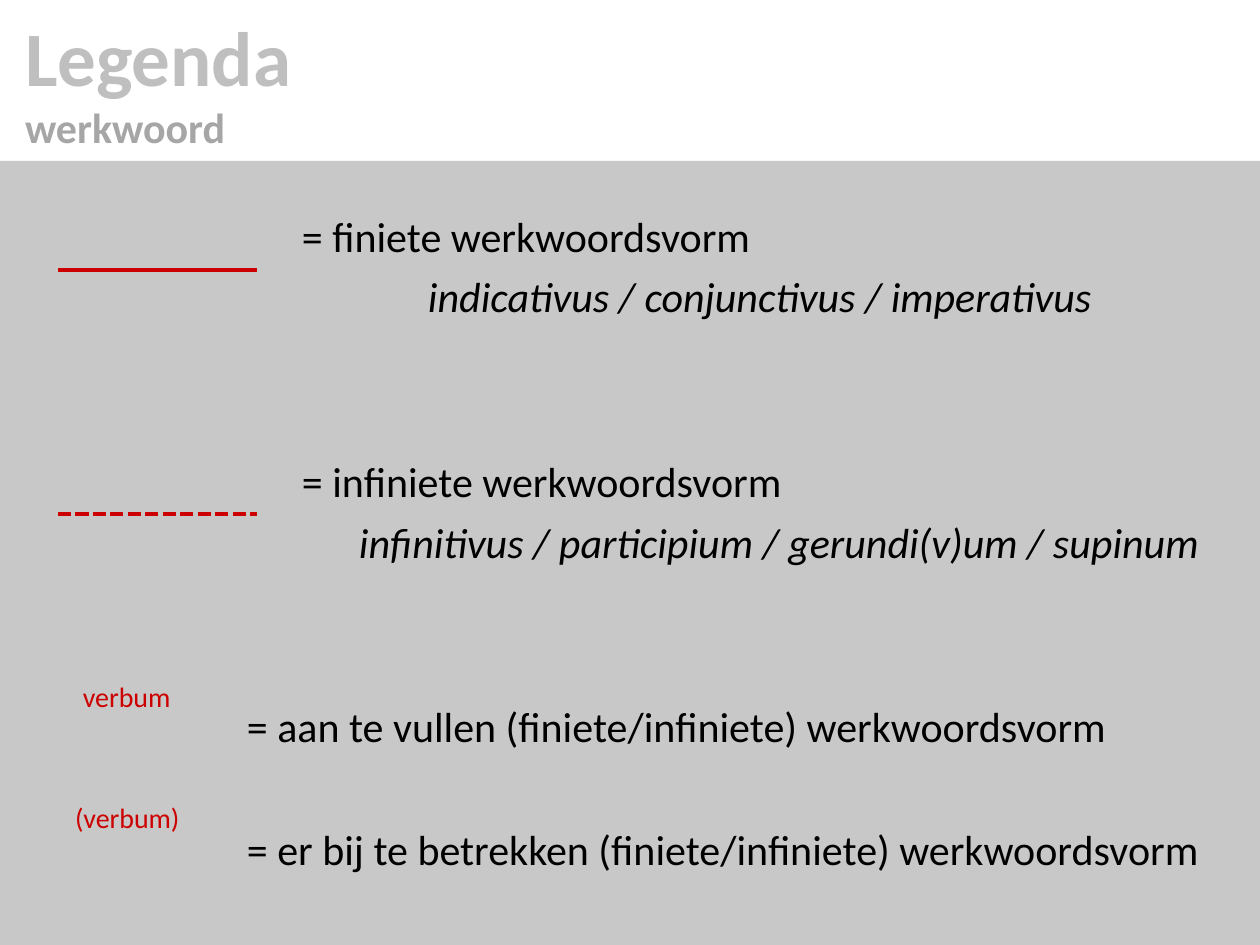
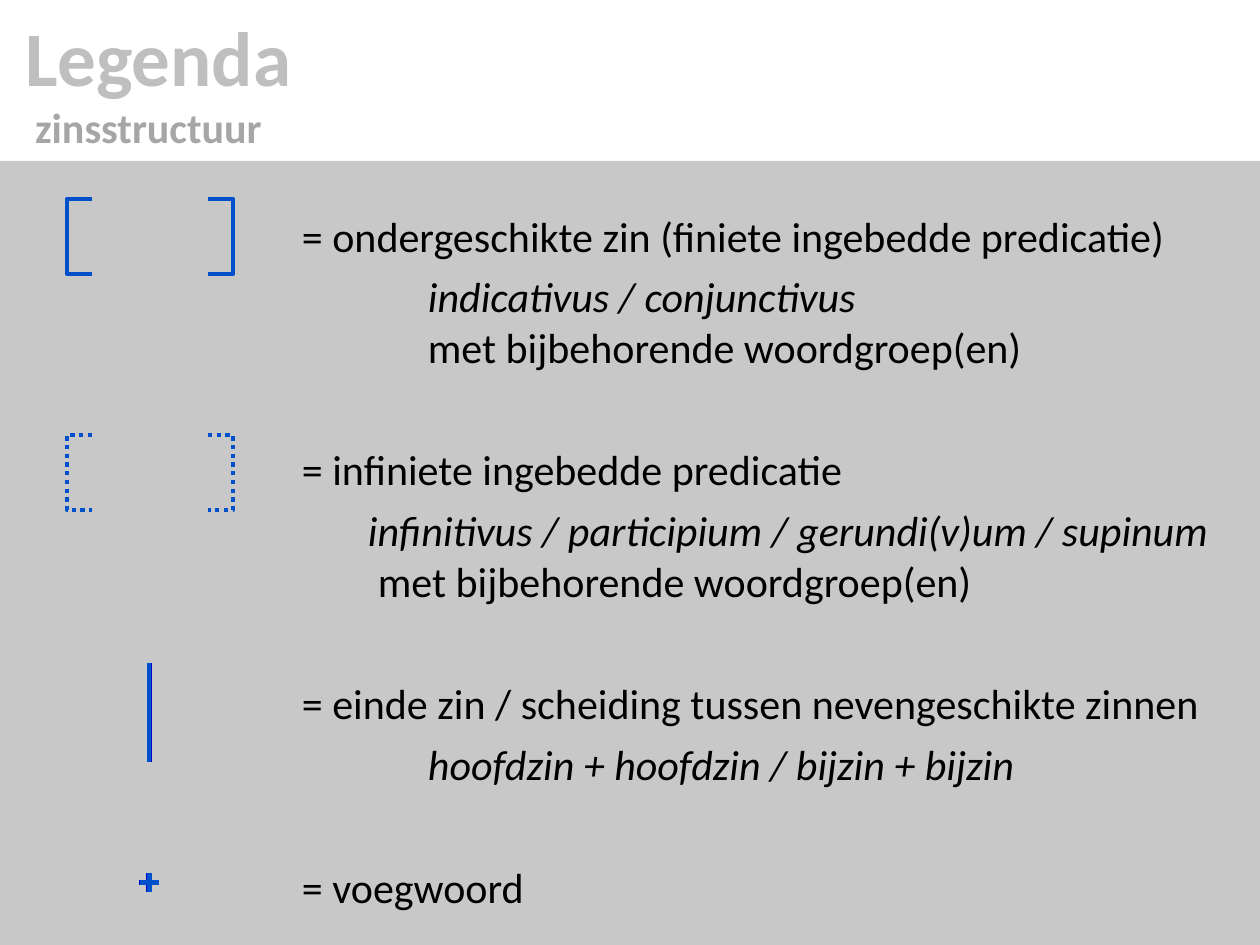
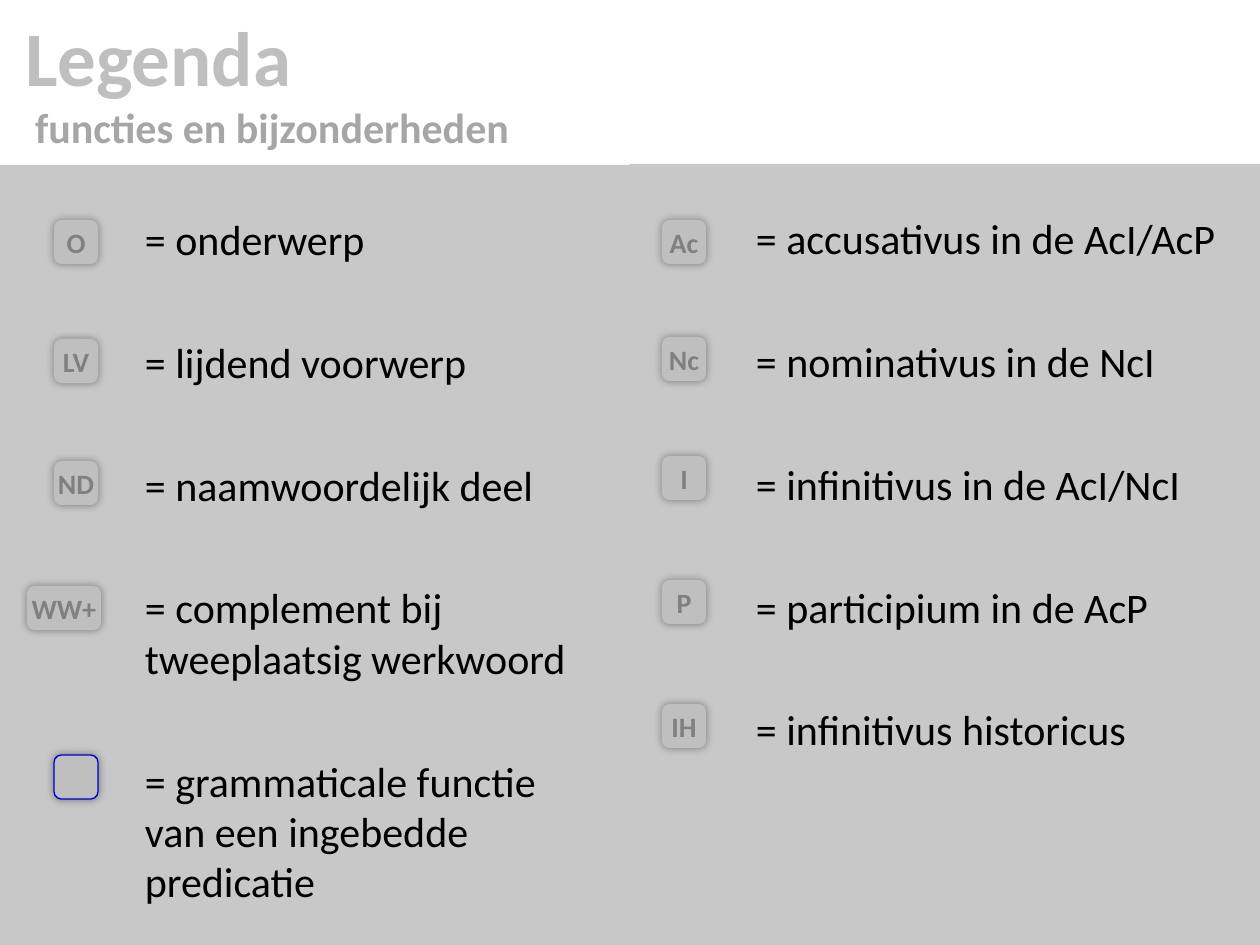
from dataclasses import dataclass

from lxml import etree
from pptx import Presentation, util as u
from pptx.dml.color import RGBColor
from pptx.enum import dml, shapes, text
from pptx.oxml.ns import qn

# Shared look
SCALE = 914400 / 126
WIDTH, HEIGHT = 1260, 945
HEADER_HEIGHT = 161
FONT = "Calibri"
BLACK, RED = "000000", "CC0000"
BLUE, DARK_BLUE = "0050CC", "0000CC"
GREY, SUBTITLE_GREY, BADGE_GREY = "BFBFBF", "A6A6A6", "808080"
PANEL_INSETS = (49, 49, 20, 25)
BLANK_LINE = 35.3  # points taken by one empty 24 pt line
BADGE_SIZE = 44


@dataclass
class Entry:
    text: str
    indent: int
    blanks: int = 0
    italic: bool = False
    after: int = 6


def px(length):
    return u.Emu(round(length * SCALE))


def color(hex_string):
    return RGBColor.from_string(hex_string)


def set_frame(frame, insets, anchor, wrap=True):
    frame.margin_left, frame.margin_top, frame.margin_right, frame.margin_bottom = map(px, insets)
    frame.vertical_anchor = anchor
    frame.word_wrap = wrap
    frame.auto_size = text.MSO_AUTO_SIZE.NONE


def style_para(para, size, hex_string, bold=False, italic=False, indent=0,
               align=text.PP_ALIGN.LEFT):
    properties = para._p.get_or_add_pPr()
    properties.set("marL", str(px(indent)))
    properties.set("indent", "0")
    para.alignment = align
    for span in para.runs:
        span.font.name = FONT
        span.font.size = u.Pt(size)
        span.font.bold = bold
        span.font.italic = italic
        span.font.color.rgb = color(hex_string)


def style_line(shape, hex_string, width, dash=None):
    shape.line.color.rgb = color(hex_string)
    shape.line.width = u.Pt(width)
    if dash:
        shape.line.dash_style = dash


def add_page(deck, subtitle, indent=0):
    page = deck.slides.add_slide(deck.slide_layouts[5])
    title = page.shapes.title
    title.left, title.top, title.width, title.height = map(px, (0, 0, WIDTH, HEADER_HEIGHT))
    frame = title.text_frame
    set_frame(frame, (25, 25, 25, 25), text.MSO_ANCHOR.MIDDLE)
    frame.text = "Legenda\n" + subtitle
    style_para(frame.paragraphs[0], 44, GREY, bold=True)
    style_para(frame.paragraphs[1], 24, SUBTITLE_GREY, bold=True, indent=indent)
    return page


def add_filled(page, kind, left, top, width, height, hex_string):
    shape = page.shapes.add_shape(kind, *map(px, (left, top, width, height)))
    shape.shadow.inherit = False
    shape.fill.solid()
    shape.fill.fore_color.rgb = color(hex_string)
    shape.line.fill.background()
    return shape


def add_panel(page, entries, left=0, top=HEADER_HEIGHT, width=WIDTH):
    panel = add_filled(page, shapes.MSO_SHAPE.RECTANGLE, left, top, width, HEIGHT - top, GREY)
    fill_color = panel._element.spPr.find(".//" + qn("a:srgbClr"))
    etree.SubElement(fill_color, qn("a:alpha"), val="85000")
    frame = panel.text_frame
    set_frame(frame, PANEL_INSETS, text.MSO_ANCHOR.TOP)
    for index, entry in enumerate(entries):
        para = frame.add_paragraph() if index else frame.paragraphs[0]
        para.text = entry.text
        style_para(para, 24, BLACK, italic=entry.italic, indent=entry.indent)
        para.space_before = u.Pt(entry.blanks * BLANK_LINE)
        para.space_after = u.Pt(entry.after)


def add_label(page, words, left, top, width):
    box = page.shapes.add_textbox(*map(px, (left, top, width, 47)))
    set_frame(box.text_frame, (0, 6, 0, 6), text.MSO_ANCHOR.TOP, wrap=False)
    box.text_frame.text = words
    style_para(box.text_frame.paragraphs[0], 16, RED)


def add_line(page, x1, y1, x2, y2, hex_string, dash=None):
    line = page.shapes.add_connector(shapes.MSO_CONNECTOR.STRAIGHT, *map(px, (x1, y1, x2, y2)))
    style_line(line, hex_string, 2.5, dash)
    etree.SubElement(line._element.spPr, qn("a:effectLst"))


def add_bracket(page, tip, spine, top, dash=None):
    bottom = top + 75
    builder = page.shapes.build_freeform(tip, top, scale=SCALE)
    builder.add_line_segments([(spine, top), (spine, bottom), (tip, bottom)], close=False)
    bracket = builder.convert_to_shape()
    bracket.shadow.inherit = False
    bracket.fill.background()
    style_line(bracket, BLUE, 2.5, dash)


def add_plus(page, left, top, hex_string):
    plus = add_filled(page, shapes.MSO_SHAPE.MATH_PLUS, left, top, 25, 25, hex_string)
    plus.adjustments[0] = 0.17
    style_line(plus, hex_string, 0)


def add_badge(page, words, left, top, width=BADGE_SIZE):
    badge = add_filled(page, shapes.MSO_SHAPE.ROUNDED_RECTANGLE, left, top, width, BADGE_SIZE, GREY)
    effects = badge._element.spPr.find(qn("a:effectLst"))
    glow = etree.SubElement(effects, qn("a:outerShdw"), blurRad=str(u.Pt(5)), dist="0",
                            dir="0", algn="ctr", rotWithShape="0")
    glow_color = etree.SubElement(glow, qn("a:srgbClr"), val=BLACK)
    etree.SubElement(glow_color, qn("a:alpha"), val="40000")
    if words:
        set_frame(badge.text_frame, (0, 0, 0, 0), text.MSO_ANCHOR.MIDDLE, wrap=False)
        badge.text_frame.text = words
        style_para(badge.text_frame.paragraphs[0], 16, BADGE_GREY, bold=True,
                   align=text.PP_ALIGN.CENTER)
    return badge


def add_verb_page(deck):
    page = add_page(deck, "werkwoord")
    add_panel(page, [
        Entry("= finiete werkwoordsvorm", 253),
        Entry("indicativus / conjunctivus / imperativus", 379, italic=True),
        Entry("= infiniete werkwoordsvorm", 253, blanks=2),
        Entry("infinitivus / participium / gerundi(v)um / supinum", 310, italic=True),
        Entry("= aan te vullen (finiete/infiniete) werkwoordsvorm", 198, blanks=2),
        Entry("= er bij te betrekken (finiete/infiniete) werkwoordsvorm", 198, blanks=1),
    ])
    add_label(page, "verbum", 83, 674, 88)
    add_label(page, "(verbum)", 75, 795, 105)
    for y, dash in ((270, None), (514, dml.MSO_LINE.SQUARE_DOT)):
        add_line(page, 58, y, 257, y, RED, dash)


def add_sentence_page(deck):
    page = add_page(deck, "zinsstructuur", indent=10)
    add_panel(page, [
        Entry("= ondergeschikte zin (finiete ingebedde predicatie)", 253),
        Entry("indicativus / conjunctivus", 379, italic=True, after=0),
        Entry("met bijbehorende woordgroep(en)", 379),
        Entry("= infiniete ingebedde predicatie", 253, blanks=1),
        Entry("infinitivus / participium / gerundi(v)um / supinum", 319, italic=True, after=0),
        Entry("met bijbehorende woordgroep(en)", 329),
        Entry("= einde zin / scheiding tussen nevengeschikte zinnen", 253, blanks=1),
        Entry("hoofdzin + hoofdzin / bijzin + bijzin", 379, italic=True),
        Entry("= voegwoord", 253, blanks=1),
    ])
    for top, dash in ((199, None), (435, dml.MSO_LINE.ROUND_DOT)):
        for tip, spine in ((92, 67), (208, 233)):
            add_bracket(page, tip, spine, top, dash)
    # Separator and plus have a dark edge one px beside them
    for x, hex_string in ((150, DARK_BLUE), (149, BLUE)):
        add_line(page, x, 663, x, 762, hex_string)
    for x, hex_string in ((136, DARK_BLUE), (137, BLUE)):
        add_plus(page, x, 870, hex_string)


def add_function_page(deck):
    page = add_page(deck, "functies en bijzonderheden", indent=10)
    columns = [
        (0, 165, 96, ["onderwerp", "lijdend voorwerp", "naamwoordelijk deel",
                      "complement bij\ntweeplaatsig werkwoord",
                      "grammaticale functie\nvan een ingebedde\npredicatie"]),
        (630, 164, 77, ["accusativus in de AcI/AcP", "nominativus in de NcI",
                        "infinitivus in de AcI/NcI", "participium in de AcP",
                        "infinitivus historicus"]),
    ]
    for left, top, indent, meanings in columns:
        add_panel(page, [Entry("= " + meaning, indent, blanks=min(index, 1))
                         for index, meaning in enumerate(meanings)], left, top, WIDTH // 2)
    # Badges beside each meaning
    for words, top in (("O", 220), ("LV", 339), ("ND", 461)):
        add_badge(page, words, 54, top)
    add_badge(page, "WW+", 27, 586, width=74)
    style_line(add_badge(page, "", 54, 755), DARK_BLUE, 0.75)
    for words, top in (("Ac", 220), ("Nc", 337), ("I", 456), ("P", 580), ("IH", 704)):
        add_badge(page, words, 662, top)


def main():
    deck = Presentation()
    deck.slide_width, deck.slide_height = px(WIDTH), px(HEIGHT)
    add_verb_page(deck)
    add_sentence_page(deck)
    add_function_page(deck)
    deck.save("out.pptx")


if __name__ == "__main__":
    main()
